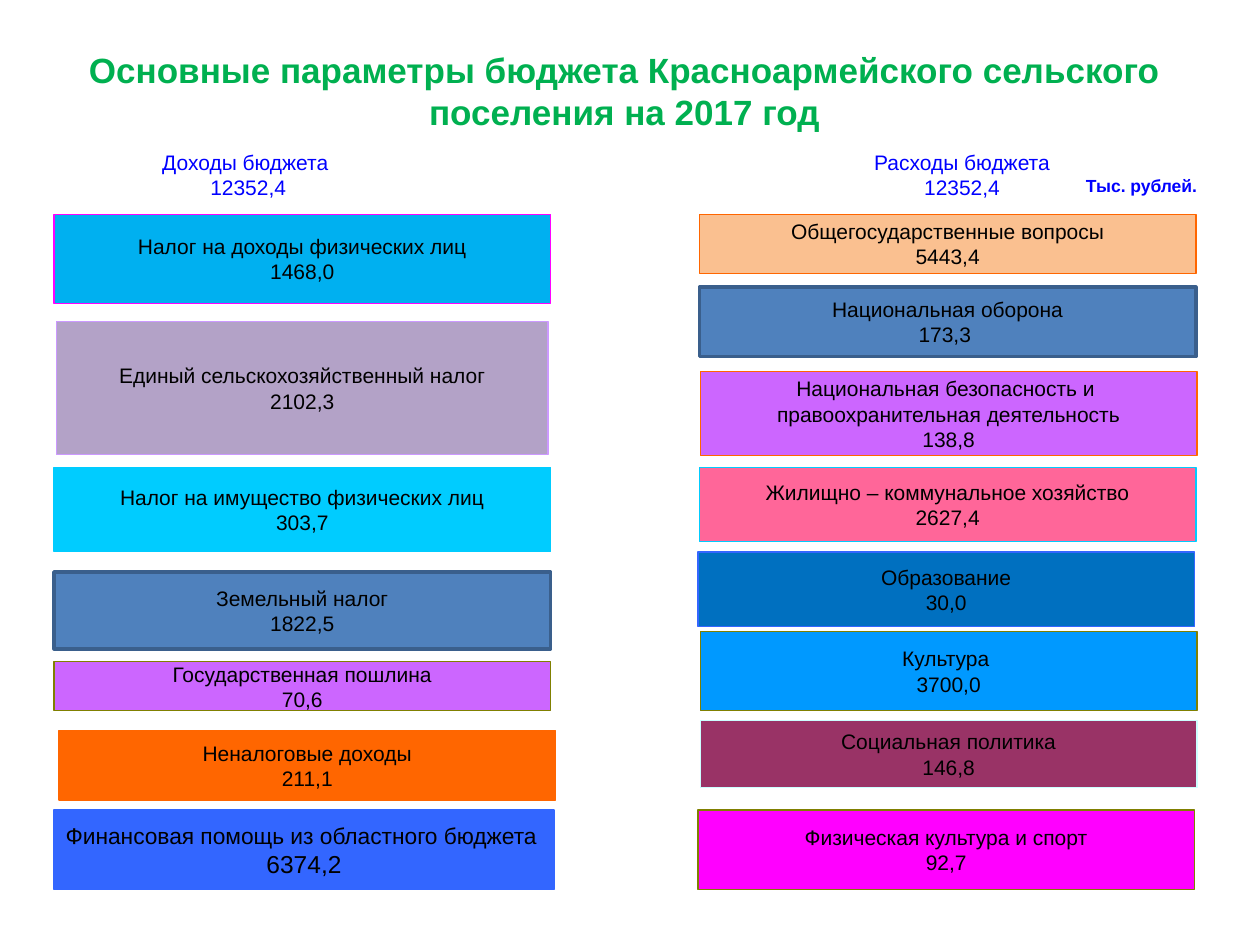
from dataclasses import dataclass
from typing import Optional

from pptx import Presentation
from pptx import util as u
from pptx.dml.color import RGBColor
from pptx.enum import shapes, text

FONT = "Arial"
LEFT, RIGHT = 1.09, 14.1
WIDTH = 10.01


@dataclass
class Block:
    words: str
    left: float
    top: float
    height: float
    fill: Optional[str]
    line: str
    width: float = WIDTH
    color: str = "000000"
    size: float = 12
    last_size: Optional[float] = None
    bold: bool = False
    line_width: float = 0.75
    wrap: bool = False


HEADINGS = [
    Block("Доходы бюджета \n12352,4", 2.11, 2.92, 1.19, "FFFFFF", "FFFFFF",
          width=5.79, color="0000FF"),
    Block("Расходы бюджета\n12352,4", 16.69, 2.92, 1.19, "FFFFFF", "FFFFFF",
          width=5.41, color="0000FF"),
    Block("Тыс. рублей.", 21.51, 3.33, 0.81, None, "FFFFFF",
          width=3, color="0000FF", size=10, bold=True),
]

INCOME = [
    Block("Налог на доходы физических лиц\n1468,0", LEFT, 4.32, 1.8, "00B0F0", "FF00FF"),
    Block("Единый сельскохозяйственный налог\n2102,3", 1.14, 6.48, 2.69,
          "B3A2C7", "CC99FF", width=9.91),
    Block("Налог на имущество физических лиц\n303,7", LEFT, 9.42, 1.7, "00CCFF", "00CCFF"),
    Block("Земельный налог\n1822,5", LEFT, 11.53, 1.55, "4F81BD", "3A5F8C",
          line_width=2, wrap=True),
    Block("Государственная пошлина\n70,6", LEFT, 13.34, 0.99, "CC66FF", "808000"),
    Block("Неналоговые доходы\n211,1", 1.19, 14.73, 1.4, "FF6600", "FF6600"),
    Block("Финансовая помощь из областного бюджета \n6374,2", LEFT, 16.33, 1.6,
          "3366FF", "3366FF", width=10.08, size=13, last_size=14),
]

EXPENSES = [
    Block("Общегосударственные вопросы\n5443,4", RIGHT, 4.32, 1.19, "FAC090", "FF6600"),
    Block("Национальная оборона\n173,3 ", RIGHT, 5.79, 1.4, "4F81BD", "3A5F8C",
          line_width=2, wrap=True),
    Block("Национальная безопасность и \nправоохранительная деятельность\n138,8",
          14.12, 7.49, 1.7, "CC66FF", "FF6600"),
    Block("Жилищно – коммунальное хозяйство\n2627,4", RIGHT, 9.42, 1.5, "FF6699", "00CCFF"),
    Block("Образование\n30,0", 14.07, 11.13, 1.5, "0070C0", "3366FF"),
    Block("Культура \n3700,0", 14.12, 12.73, 1.6, "0099FF", "808000"),
    Block("Социальная политика\n146,8", 14.12, 14.53, 1.35, "993366", "CCFFFF"),
    Block("Физическая культура и спорт\n92,7", 14.07, 16.33, 1.6, "FF00FF", "808000"),
]


def rgb(value: str) -> RGBColor:
    return RGBColor.from_string(value)


def format_text(frame, size: float, color: str, bold: bool, wrap: bool) -> None:
    frame.word_wrap = wrap
    frame.auto_size = text.MSO_AUTO_SIZE.NONE
    frame.vertical_anchor = text.MSO_ANCHOR.MIDDLE
    for para in frame.paragraphs:
        para.alignment = text.PP_ALIGN.CENTER
        for span in para.runs:
            span.font.name = FONT
            span.font.size = u.Pt(size)
            span.font.bold = bold
            span.font.color.rgb = rgb(color)


def draw_block(page, block: Block) -> None:
    box = page.shapes.add_shape(
        shapes.MSO_SHAPE.RECTANGLE,
        u.Cm(block.left), u.Cm(block.top), u.Cm(block.width), u.Cm(block.height))
    box.shadow.inherit = False
    if block.fill:
        box.fill.solid()
        box.fill.fore_color.rgb = rgb(block.fill)
    else:
        box.fill.background()
    box.line.color.rgb = rgb(block.line)
    box.line.width = u.Pt(block.line_width)
    frame = box.text_frame
    frame.text = block.words
    format_text(frame, block.size, block.color, block.bold, block.wrap)
    if block.last_size:
        frame.paragraphs[-1].runs[0].font.size = u.Pt(block.last_size)


def draw_title(page, words: str) -> None:
    title = page.shapes.title
    title.left, title.top = u.Cm(0.69), u.Cm(0.71)
    title.width, title.height = u.Cm(23.8), u.Cm(2.21)
    title.text_frame.text = words
    format_text(title.text_frame, 20, "00B050", True, True)


def main() -> None:
    deck = Presentation()
    deck.slide_width, deck.slide_height = u.Cm(25.4), u.Cm(19.05)
    page = deck.slides.add_slide(deck.slide_layouts[0])
    subtitle = page.placeholders[1].element
    subtitle.getparent().remove(subtitle)
    draw_title(page, "Основные параметры бюджета Красноармейского сельского поселения на 2017 год")
    for block in HEADINGS + INCOME + EXPENSES:
        draw_block(page, block)
    deck.save("out.pptx")


if __name__ == "__main__":
    main()
